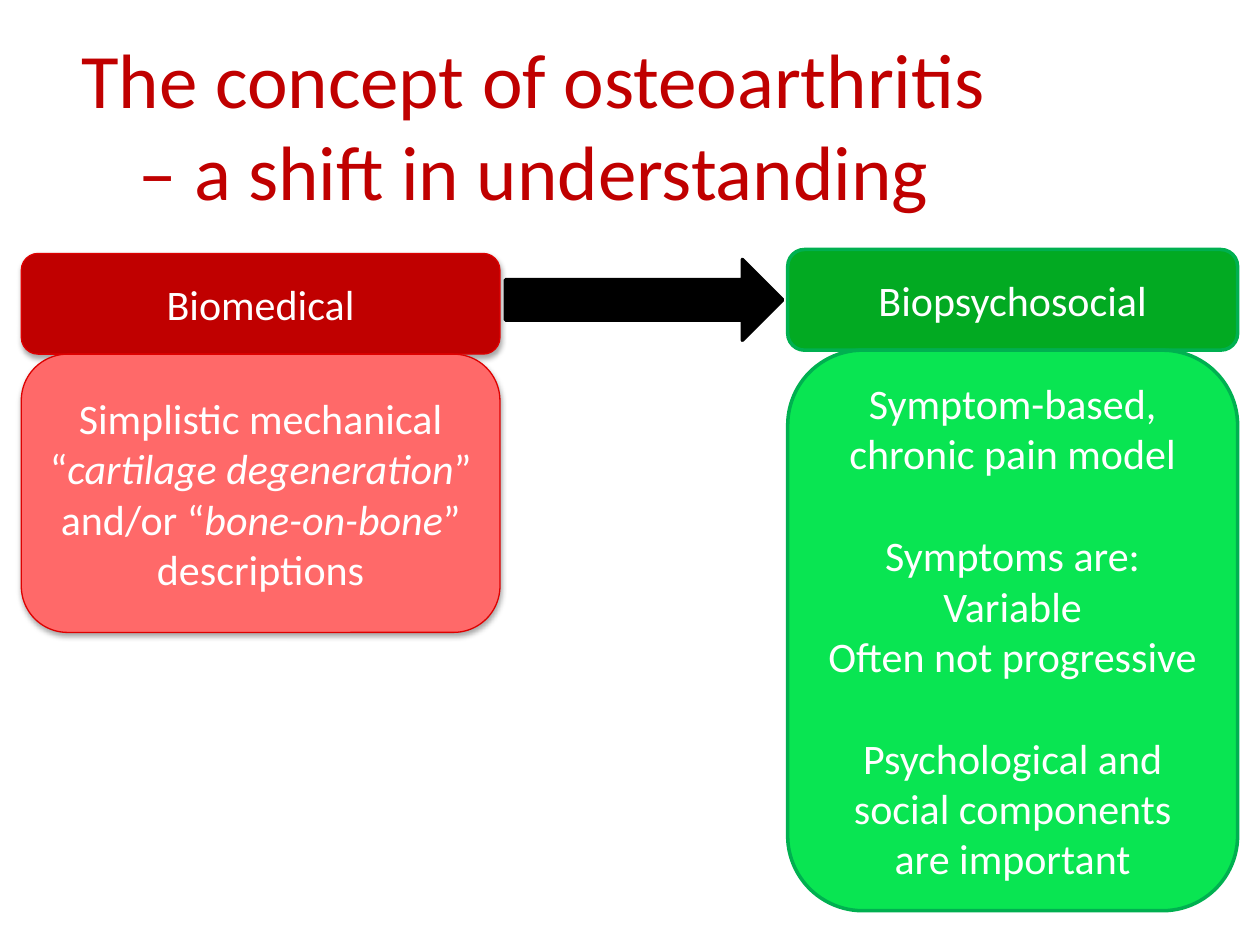
"""Build a slide contrasting the biomedical and biopsychosocial views of osteoarthritis."""
from lxml import etree
from pptx import Presentation
from pptx.dml.color import RGBColor
from pptx.enum.shapes import MSO_SHAPE
from pptx.enum.text import MSO_ANCHOR, PP_ALIGN
from pptx.oxml.ns import qn
from pptx.util import Cm, Pt

ROUNDED = MSO_SHAPE.ROUNDED_RECTANGLE
ARROW = MSO_SHAPE.RIGHT_ARROW
MIDDLE = MSO_ANCHOR.MIDDLE
CENTER = PP_ALIGN.CENTER

FONT = "Calibri"
WHITE = RGBColor(0xFF, 0xFF, 0xFF)
BLACK = RGBColor(0x00, 0x00, 0x00)
DARK_RED = RGBColor(0xC0, 0x00, 0x00)
EDGE_RED = RGBColor(0xDE, 0x00, 0x00)
LIGHT_RED = RGBColor(0xFF, 0x69, 0x69)
DARK_GREEN = RGBColor(0x02, 0xAA, 0x22)
EDGE_GREEN = RGBColor(0x00, 0xB0, 0x50)
LIGHT_GREEN = RGBColor(0x09, 0xE5, 0x52)

TITLE = "The concept of osteoarthritis – a shift in understanding"
HEADER_HEIGHT = 2.03
GROUP_GAP = 29.3

MODELS = [
    {
        "header": "Biomedical",
        "groups": [[[
            ("Simplistic mechanical “", False),
            ("cartilage degeneration", True),
            ("” and/or “", False),
            ("bone-on-bone", True),
            ("” descriptions", False),
        ]]],
        "left": 0.43, "top": 5.11, "width": 9.65, "body_height": 5.61,
        "fills": (DARK_RED, LIGHT_RED), "edge": EDGE_RED, "weight": 0.75, "shadow": True,
    },
    {
        "header": "Biopsychosocial",
        "groups": [
            [[("Symptom-based, chronic pain model", False)]],
            [[("Symptoms are:", False)], [("Variable", False)], [("Often not progressive", False)]],
            [[("Psychological and social components are important", False)]],
        ],
        "left": 15.88, "top": 5.03, "width": 9.07, "body_height": 11.3,
        "fills": (DARK_GREEN, LIGHT_GREEN), "edge": EDGE_GREEN, "weight": 2, "shadow": False,
    },
]


def write_groups(text_frame, groups, size, color):
    """Write groups of paragraphs, with one line of space between groups."""
    text_frame.word_wrap = True
    text_frame.vertical_anchor = MIDDLE
    paragraph = None
    for group_index, group in enumerate(groups):
        for line_index, runs in enumerate(group):
            paragraph = text_frame.add_paragraph() if paragraph else text_frame.paragraphs[0]
            paragraph.alignment = CENTER
            if group_index and not line_index:
                paragraph.space_before = Pt(GROUP_GAP)
            for text, italic in runs:
                run = paragraph.add_run()
                run.text = text
                run.font.name = FONT
                run.font.size = Pt(size)
                run.font.italic = italic
                run.font.color.rgb = color


def add_filled_shape(slide, kind, box, fill, edge, weight):
    """Add a filled and outlined shape without a shadow."""
    shape = slide.shapes.add_shape(kind, *(Cm(value) for value in box))
    shape.shadow.inherit = False
    shape.fill.solid()
    shape.fill.fore_color.rgb = fill
    shape.line.color.rgb = edge
    shape.line.width = Pt(weight)
    return shape


def add_drop_shadow(shape):
    """Give a shape a soft shadow straight below it."""
    effects = shape._element.spPr.find(qn("a:effectLst"))
    shadow = etree.SubElement(effects, qn("a:outerShdw"), blurRad=str(Pt(3.1)),
                              dist=str(Pt(1.8)), dir="5400000", rotWithShape="0")
    color = etree.SubElement(shadow, qn("a:srgbClr"), val=str(BLACK))
    etree.SubElement(color, qn("a:alpha"), val="35000")


def add_model(slide, model):
    """Add a header box with its description box directly below."""
    left, top, width = model["left"], model["top"], model["width"]
    parts = [
        (top, HEADER_HEIGHT, [[[(model["header"], False)]]]),
        (top + HEADER_HEIGHT, model["body_height"], model["groups"]),
    ]
    for (part_top, height, groups), fill in zip(parts, model["fills"]):
        shape = add_filled_shape(slide, ROUNDED, (left, part_top, width, height),
                                 fill, model["edge"], model["weight"])
        if model["shadow"]:
            add_drop_shadow(shape)
        write_groups(shape.text_frame, groups, 24, WHITE)


def main():
    """Create and save the presentation."""
    presentation = Presentation()
    presentation.slide_width, presentation.slide_height = Cm(25.4), Cm(19.05)
    slide = presentation.slides.add_slide(presentation.slide_layouts[6])
    title = slide.shapes.add_textbox(Cm(1.02), Cm(0.48), Cm(19.48), Cm(4.04))
    write_groups(title.text_frame, [[[(TITLE, False)]]], 44, DARK_RED)
    for model in MODELS:
        add_model(slide, model)
    add_filled_shape(slide, ARROW, (10.19, 5.23, 5.59, 1.63), BLACK, BLACK, 2)
    presentation.save("out.pptx")


if __name__ == "__main__":
    main()
